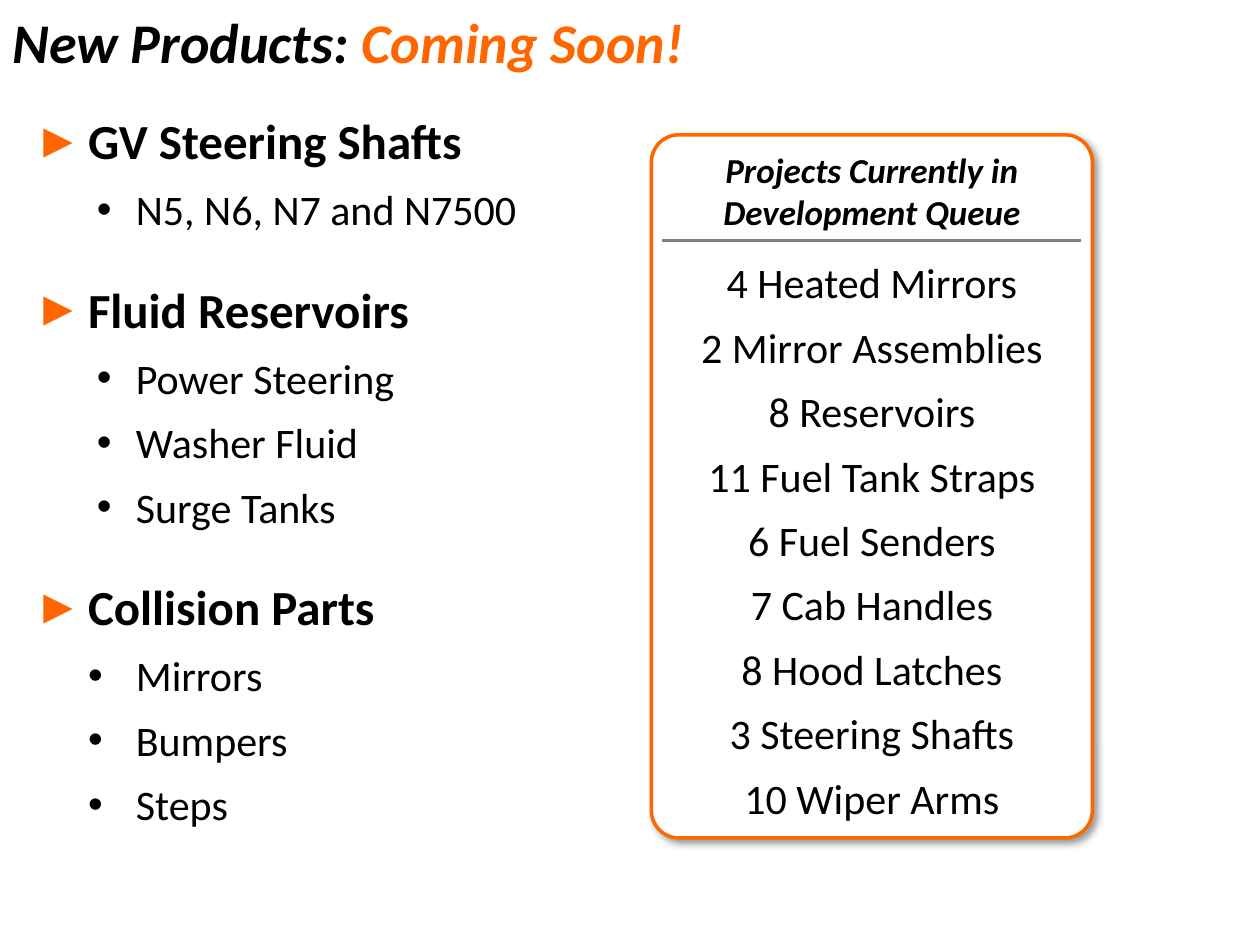
from dataclasses import dataclass

from lxml import etree
from pptx import Presentation
from pptx import util as u
from pptx.dml.color import RGBColor
from pptx.enum import shapes, text
from pptx.oxml.ns import qn


@dataclass(frozen=True)
class Theme:
    font: str = "Calibri"
    ink: str = "000000"
    accent: str = "FF6600"
    paper: str = "FFFFFF"
    rule: str = "808080"
    title: int = 32
    heading: int = 28
    body: int = 24
    caption: int = 20
    gap: int = 4
    group_gap: int = 22


@dataclass(frozen=True)
class Group:
    heading: str
    items: tuple[str, ...]
    hanging: float = 0.31


THEME = Theme()
ITEM_INDENT = 0.81
HEADING_INDENT = 0.43
PANEL_LEFT, PANEL_WIDTH = 5.17, 3.5

GROUPS = (
    Group("GV Steering Shafts", ("N5, N6, N7 and N7500",)),
    Group("Fluid Reservoirs", ("Power Steering", "Washer Fluid", "Surge Tanks")),
    Group("Collision Parts", ("Mirrors", "Bumpers", "Steps"), hanging=0.38),
)
QUEUE = (
    "4 Heated Mirrors", "2 Mirror Assemblies", "8 Reservoirs",
    "11 Fuel Tank Straps", "6 Fuel Senders", "7 Cab Handles",
    "8 Hood Latches", "3 Steering Shafts", "10 Wiper Arms",
)


def add_box(page, left: float, top: float, width: float, height: float,
            anchor=text.MSO_ANCHOR.TOP):
    """Add a wrapping text box and return its text frame."""
    box = page.shapes.add_textbox(
        u.Inches(left), u.Inches(top), u.Inches(width), u.Inches(height))
    frame = box.text_frame
    frame.word_wrap = True
    frame.vertical_anchor = anchor
    return frame


def add_span(para, words: str, *, size: int, color: str = THEME.ink,
             bold: bool = False, italic: bool = False) -> None:
    span = para.add_run()
    span.text = words
    span.font.name = THEME.font
    span.font.size = u.Pt(size)
    span.font.bold = bold
    span.font.italic = italic
    span.font.color.rgb = RGBColor.from_string(color)


def add_para(frame, words: str, *, before: int = THEME.gap, after: int = THEME.gap,
             align=text.PP_ALIGN.LEFT, level: int = 0, **span_format):
    """Fill the empty first paragraph, or append one with space before it."""
    first = frame.paragraphs[0]
    para = frame.add_paragraph() if first.runs else first
    para.space_before = u.Pt(before if first.runs else 0)
    para.space_after = u.Pt(after)
    para.alignment = align
    para.level = level
    add_span(para, words, **span_format)
    return para


def set_bullet(para, mark: str, indent: float, hanging: float, color: str) -> None:
    props = para._p.get_or_add_pPr()
    props.set("marL", str(u.Inches(indent)))
    props.set("indent", str(-u.Inches(hanging)))
    tint = etree.SubElement(props, qn("a:buClr"))
    etree.SubElement(tint, qn("a:srgbClr"), val=color)
    etree.SubElement(props, qn("a:buFont"), typeface="Arial")
    etree.SubElement(props, qn("a:buChar"), char=mark)


def add_shadow(shape) -> None:
    effects = shape._element.spPr.find(qn("a:effectLst"))
    shadow = etree.SubElement(
        effects, qn("a:outerShdw"), blurRad=str(u.Pt(4)), dist=str(u.Pt(3)),
        dir=str(45 * 60000), algn="tl", rotWithShape="0")
    color = etree.SubElement(shadow, qn("a:srgbClr"), val=THEME.ink)
    etree.SubElement(color, qn("a:alpha"), val="40000")


def draw_panel(page) -> None:
    panel = page.shapes.add_shape(
        shapes.MSO_SHAPE.ROUNDED_RECTANGLE, u.Inches(PANEL_LEFT), u.Inches(1.07),
        u.Inches(PANEL_WIDTH), u.Inches(5.58))
    panel.adjustments[0] = 0.062
    panel.fill.solid()
    panel.fill.fore_color.rgb = RGBColor.from_string(THEME.paper)
    panel.line.color.rgb = RGBColor.from_string(THEME.accent)
    panel.line.width = u.Pt(2)
    panel.shadow.inherit = False
    add_shadow(panel)


def draw_groups(page, groups: tuple[Group, ...]) -> None:
    frame = add_box(page, 0.17, 0.83, 4.42, 5.42)
    for group in groups:
        heading = add_para(frame, group.heading, before=THEME.group_gap,
                           size=THEME.heading, bold=True)
        set_bullet(heading, "►", HEADING_INDENT, HEADING_INDENT, THEME.accent)
        for item in group.items:
            para = add_para(frame, item, level=1, size=THEME.body)
            set_bullet(para, "•", ITEM_INDENT, group.hanging, THEME.ink)


def draw_queue(page, projects: tuple[str, ...]) -> None:
    caption = add_box(page, PANEL_LEFT, 1.13, PANEL_WIDTH, 0.87)
    add_para(caption, "Projects Currently in Development Queue", after=0,
             align=text.PP_ALIGN.CENTER, size=THEME.caption, bold=True, italic=True)

    rule = page.shapes.add_connector(
        shapes.MSO_CONNECTOR.STRAIGHT, u.Inches(5.25), u.Inches(1.91),
        u.Inches(8.58), u.Inches(1.91))
    rule.line.color.rgb = RGBColor.from_string(THEME.rule)
    rule.line.width = u.Pt(1.5)
    etree.SubElement(rule._element.spPr, qn("a:effectLst"))

    frame = add_box(page, PANEL_LEFT, 1.99, PANEL_WIDTH, 4.66)
    for project in projects:
        add_para(frame, project, align=text.PP_ALIGN.CENTER, size=THEME.body)


def draw_title(page) -> None:
    frame = add_box(page, 0, 0.08, 7.83, 0.5, anchor=text.MSO_ANCHOR.MIDDLE)
    style = dict(size=THEME.title, bold=True, italic=True)
    para = add_para(frame, "New Products: ", after=0, **style)
    add_span(para, "Coming Soon!", color=THEME.accent, **style)


def main() -> None:
    deck = Presentation()
    deck.slide_width, deck.slide_height = u.Inches(10), u.Inches(7.5)
    page = deck.slides.add_slide(deck.slide_layouts[6])
    draw_panel(page)
    draw_groups(page, GROUPS)
    draw_queue(page, QUEUE)
    draw_title(page)
    deck.save("out.pptx")


if __name__ == "__main__":
    main()
